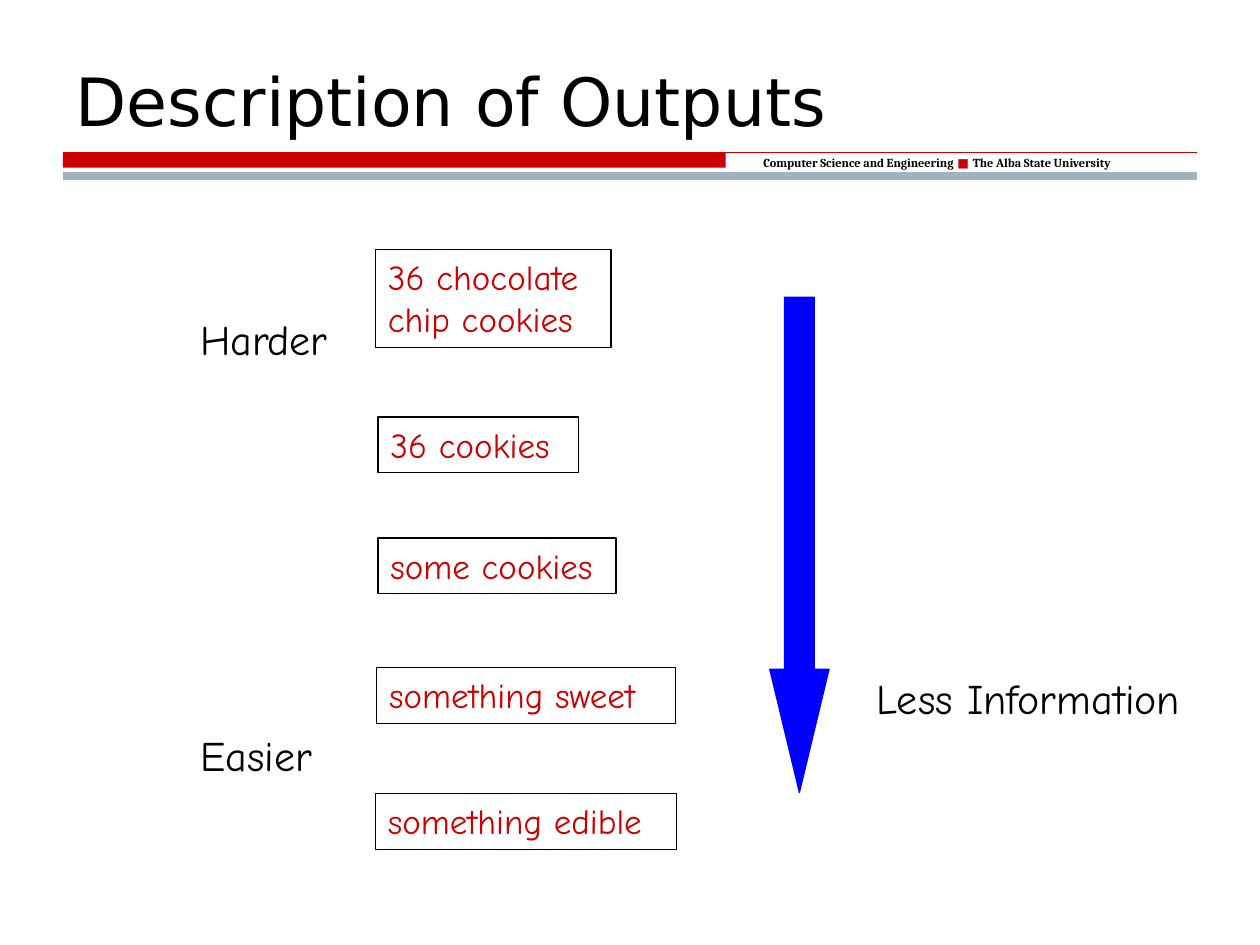
from typing import NamedTuple, Optional

import pptx
import pptx.dml.color
import pptx.enum.shapes
import pptx.enum.text
import pptx.oxml
import pptx.util

Inches = pptx.util.Inches
Pt = pptx.util.Pt
SHAPE = pptx.enum.shapes.MSO_SHAPE
ANCHOR = pptx.enum.text.MSO_ANCHOR

COLORS = {"red": "CC0000", "gray": "A3B2C1", "blue": "0000FF", "black": "000000"}
HAND_FONT, TITLE_FONT, FOOTER_FONT = "Comic Neue", "DejaVu Sans", "Cambria"
MARGIN, CONTENT_WIDTH = 0.5, 9


class Label(NamedTuple):
    text: str
    left: float
    top: float
    width: float
    height: float


class Style(NamedTuple):
    size: int
    font: str
    color: str
    bold: bool = False


OUTPUTS = [
    Label("36 chocolate\vchip cookies", 2.98, 1.98, 1.87, 0.78),
    Label("36 cookies", 3, 3.31, 1.59, 0.44),
    Label("some cookies", 3, 4.27, 1.89, 0.44),
    Label("something sweet", 2.99, 5.3, 2.37, 0.44),
    Label("something edible", 2.98, 6.3, 2.39, 0.44),
]
CAPTIONS = [
    Label("Less Information", 6.86, 5.29, 2.88, 0.5),
    Label("Easier", 1.49, 5.74, 1.18, 0.5),
    Label("Harder", 1.49, 2.44, 1.32, 0.5),
]
TITLE = Label("Description of Outputs", MARGIN, 0.25, CONTENT_WIDTH, 0.91)
FOOTER_BOLD = Style(7, FOOTER_FONT, "black", True)
FOOTER = [
    ("Computer Science and Engineering", FOOTER_BOLD),
    (" ■ ", Style(7, TITLE_FONT, "red")),
    ("The Alba State University", FOOTER_BOLD),
]


def rgb(name: str) -> pptx.dml.color.RGBColor:
    return pptx.dml.color.RGBColor.from_string(COLORS[name])


def style_run(r, style: Style) -> None:
    r.font.size = Pt(style.size)
    r.font.name = style.font
    r.font.bold = style.bold
    r.font.color.rgb = rgb(style.color)


def add_shape(s, kind, left: float, top: float, width: float, height: float,
              fill: Optional[str] = None, line: Optional[str] = None):
    """Add a flat preset shape; a missing fill or line colour means none."""
    sp = s.shapes.add_shape(kind, Inches(left), Inches(top), Inches(width), Inches(height))
    sp.shadow.inherit = False
    if fill:
        sp.fill.solid()
        sp.fill.fore_color.rgb = rgb(fill)
    else:
        sp.fill.background()
    if line:
        sp.line.color.rgb = rgb(line)
        sp.line.width = Pt(0.75)
    else:
        sp.line.fill.background()
    return sp


def add_rule(s, top: float, color: str, weight: float) -> None:
    """Add a horizontal line across the content width."""
    y = Inches(top)
    rule = s.shapes.add_connector(pptx.enum.shapes.MSO_CONNECTOR.STRAIGHT,
                                  Inches(MARGIN), y, Inches(MARGIN + CONTENT_WIDTH), y)
    rule.line.color.rgb = rgb(color)
    rule.line.width = Pt(weight)
    rule._element.spPr.append(pptx.oxml.parse_xml(
        '<a:effectLst xmlns:a="http://schemas.openxmlformats.org/drawingml/2006/main"/>'))


def write_text(sp, text: str, style: Style, anchor=ANCHOR.TOP) -> None:
    tf = sp.text_frame
    tf.word_wrap = True
    tf.vertical_anchor = anchor
    p = tf.paragraphs[0]
    p.text = text
    p.alignment = pptx.enum.text.PP_ALIGN.LEFT
    for r in p.runs:
        style_run(r, style)


def add_text_box(s, label: Label, style: Style, anchor=ANCHOR.TOP) -> None:
    sp = s.shapes.add_textbox(*(Inches(v) for v in label[1:]))
    write_text(sp, label.text, style, anchor)


def add_banner(s) -> None:
    add_shape(s, SHAPE.RECTANGLE, MARGIN, 1.21, 5.26, 0.12, fill="red")
    add_rule(s, 1.21, "red", 0.75)
    sp = s.shapes.add_textbox(Inches(5.96), Inches(1.18), Inches(3.44), Inches(0.22))
    sp.text_frame.word_wrap = True
    p = sp.text_frame.paragraphs[0]
    for text, style in FOOTER:
        r = p.add_run()
        r.text = text
        style_run(r, style)
    add_rule(s, 1.4, "gray", 4.5)


def main() -> None:
    prs = pptx.Presentation()
    prs.slide_width, prs.slide_height = Inches(10), Inches(7.5)
    s = prs.slides.add_slide(prs.slide_layouts[6])

    add_banner(s)
    add_text_box(s, TITLE, Style(38, TITLE_FONT, "black"), ANCHOR.BOTTOM)
    for output in OUTPUTS:
        box = add_shape(s, SHAPE.RECTANGLE, *output[1:], line="black")
        write_text(box, output.text, Style(20, HAND_FONT, "red"))

    arrow = add_shape(s, SHAPE.DOWN_ARROW, 6.11, 2.36, 0.47, 3.93, fill="blue", line="blue")
    arrow.adjustments[0] = 0.5
    arrow.adjustments[1] = 2.08

    for caption in CAPTIONS:
        add_text_box(s, caption, Style(24, HAND_FONT, "black"))

    prs.save("out.pptx")


if __name__ == "__main__":
    main()
